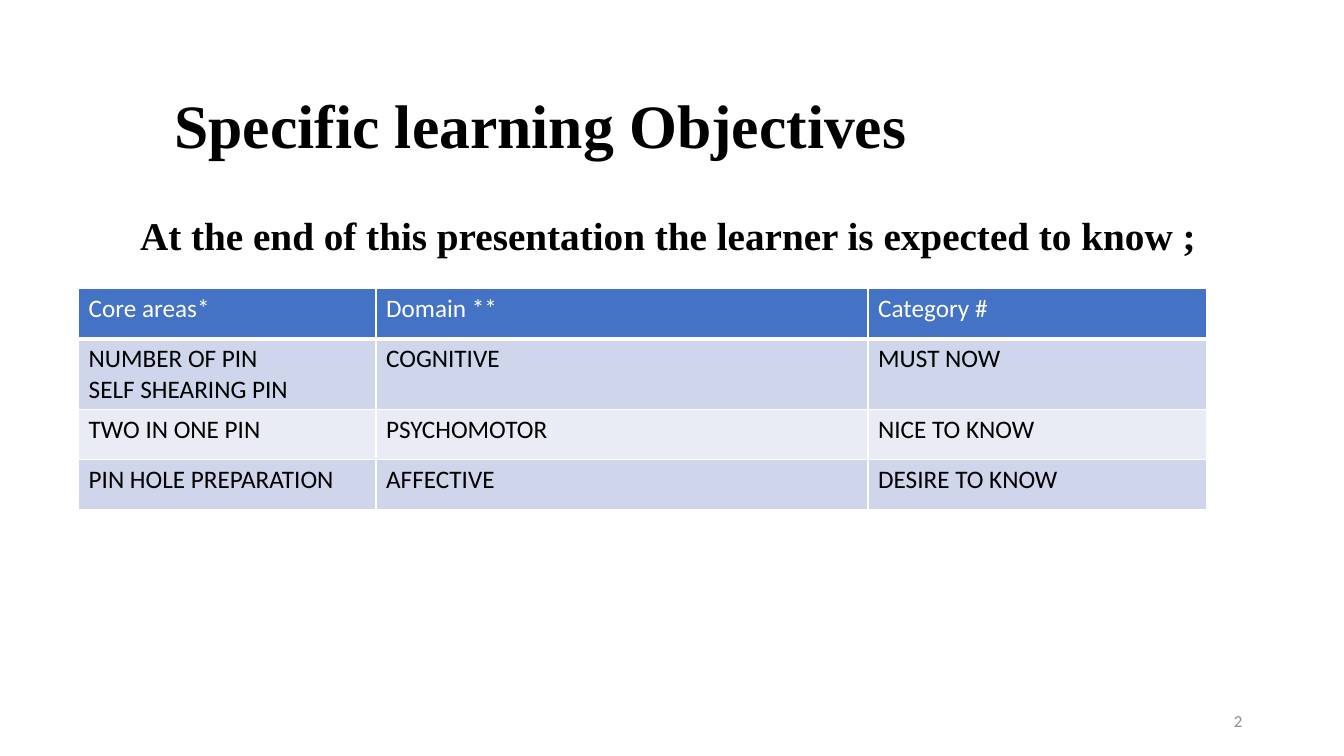
from dataclasses import dataclass

from lxml import etree
from pptx import Presentation
from pptx.dml.color import RGBColor
from pptx.enum.text import MSO_ANCHOR, MSO_AUTO_SIZE, PP_ALIGN
from pptx.oxml.ns import qn
from pptx.util import Inches, Pt

LEFT, RIGHT = PP_ALIGN.LEFT, PP_ALIGN.RIGHT
TOP, MIDDLE = MSO_ANCHOR.TOP, MSO_ANCHOR.MIDDLE
NO_FIT = MSO_AUTO_SIZE.NONE
TITLE_ONLY = 5


@dataclass(frozen=True)
class Theme:
    heading_font: str = "Times New Roman"
    body_font: str = "Calibri"
    ink: str = "000000"
    white: str = "FFFFFF"
    muted: str = "8C8C8C"
    header: str = "4472C4"
    bands: tuple = ("CFD5EA", "E9EBF5")
    title_size: int = 44
    lead_size: int = 28
    body_size: int = 18
    number_size: int = 12


THEME = Theme()

COLUMNS = (2.95, 4.88, 3.36)
ROW_HEIGHT = 0.5
OBJECTIVES = (
    ("Core areas*", "Domain **", "Category #"),
    ("NUMBER OF PIN\nSELF SHEARING PIN", "COGNITIVE", "MUST NOW"),
    ("TWO IN ONE PIN", "PSYCHOMOTOR", "NICE TO KNOW"),
    ("PIN HOLE PREPARATION", "AFFECTIVE", "DESIRE TO KNOW"),
)


def write(tf, text, *, size, font=THEME.body_font, color=THEME.ink,
          bold=False, align=LEFT, spacing=None):
    """Fill a text frame, one paragraph per line of text."""
    tf.word_wrap = True
    for i, line in enumerate(text.split("\n")):
        p = tf.paragraphs[0] if i == 0 else tf.add_paragraph()
        p.alignment = align
        p.line_spacing = spacing
        r = p.add_run()
        r.text = line
        r.font.name = font
        r.font.size = Pt(size)
        r.font.bold = bold
        r.font.color.rgb = RGBColor.from_string(color)


def add_title(s, text, box):
    sp = s.shapes.title
    sp.left, sp.top, sp.width, sp.height = map(Inches, box)
    tf = sp.text_frame
    tf.auto_size = NO_FIT
    tf.vertical_anchor = MIDDLE
    write(tf, text, size=THEME.title_size, font=THEME.heading_font,
          bold=True, spacing=0.9)


def add_text(s, text, box, anchor=TOP, **style):
    tf = s.shapes.add_textbox(*map(Inches, box)).text_frame
    tf.vertical_anchor = anchor
    write(tf, text, **style)


def set_borders(cell, bottom):
    """Draw white cell borders, with the bottom one of the given width."""
    tc_pr = cell._tc.get_or_add_tcPr()
    widths = (("lnL", 1), ("lnR", 1), ("lnT", 1), ("lnB", bottom))
    for i, (side, width) in enumerate(widths):
        ln = etree.Element(qn(f"a:{side}"), w=str(Pt(width)))
        fill = etree.SubElement(ln, qn("a:solidFill"))
        etree.SubElement(fill, qn("a:srgbClr"), val=THEME.white)
        tc_pr.insert(i, ln)


def add_objectives(s, rows, left, top):
    frame = s.shapes.add_table(len(rows), len(COLUMNS), Inches(left), Inches(top),
                               Inches(sum(COLUMNS)), Inches(ROW_HEIGHT * len(rows)))
    table = frame.table
    for column, width in zip(table.columns, COLUMNS):
        column.width = Inches(width)
    for i, row in enumerate(rows):
        is_header = i == 0
        fill = THEME.header if is_header else THEME.bands[(i - 1) % 2]
        for j, text in enumerate(row):
            cell = table.cell(i, j)
            cell.fill.solid()
            cell.fill.fore_color.rgb = RGBColor.from_string(fill)
            # The rule under the header is heavier, seen from both sides
            set_borders(cell, bottom=3 if is_header else 1)
            write(cell.text_frame, text, size=THEME.body_size,
                  color=THEME.white if is_header else THEME.ink)


def main():
    prs = Presentation()
    prs.slide_width, prs.slide_height = Inches(13.33), Inches(7.5)
    s = prs.slides.add_slide(prs.slide_layouts[TITLE_ONLY])

    # Heading and lead sentence
    add_title(s, "Specific learning Objectives", (1.63, 0.67, 10.13, 1.21))
    add_text(s, "At the end of this presentation the learner is expected to know ;",
             (1.29, 2.05, 10.71, 0.57), size=THEME.lead_size,
             font=THEME.heading_font, bold=True)

    # Learning objectives
    add_objectives(s, OBJECTIVES, 0.78, 2.86)

    # Slide number
    add_text(s, "2", (9.42, 6.95, 3, 0.4), anchor=MIDDLE,
             size=THEME.number_size, color=THEME.muted, align=RIGHT)

    prs.save("out.pptx")


if __name__ == "__main__":
    main()
